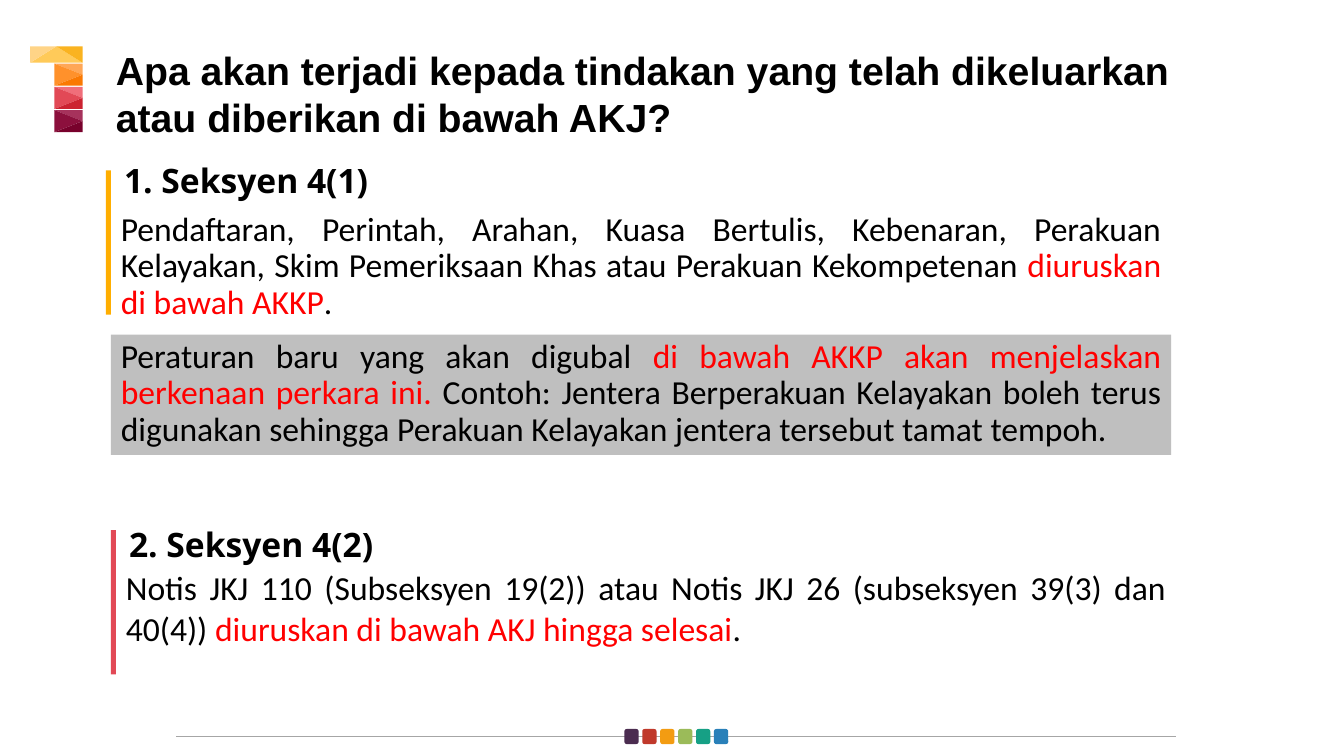
from lxml.etree import SubElement
from pptx import Presentation
from pptx.dml.color import RGBColor
from pptx.enum.shapes import MSO_CONNECTOR, MSO_SHAPE
from pptx.enum.text import MSO_ANCHOR, MSO_AUTO_SIZE, PP_ALIGN
from pptx.oxml.ns import qn
from pptx.util import Pt

BLACK, RED, GREY = "000000", "FF0000", "BFBFBF"
WIDE = 757.4


def rgb(value):
    return RGBColor.from_string(value)


def write(sp, runs, font="Calibri", size=24, bold=False, align=PP_ALIGN.LEFT,
          spacing=1.0, inset=(0, 0)):
    """Fill a shape with one paragraph made of (text, colour) runs."""
    tf = sp.text_frame
    tf.word_wrap = True
    tf.auto_size = MSO_AUTO_SIZE.NONE
    tf.vertical_anchor = MSO_ANCHOR.TOP
    tf.margin_left = tf.margin_right = Pt(inset[0])
    tf.margin_top = tf.margin_bottom = Pt(inset[1])
    p = tf.paragraphs[0]
    p.alignment = align
    p.line_spacing = spacing
    for text, color in runs:
        r = p.add_run()
        r.text = text
        r.font.name, r.font.size, r.font.bold = font, Pt(size), bold
        r.font.color.rgb = rgb(color)


def paint(sp, color):
    sp.shadow.inherit = False
    sp.fill.solid()
    sp.fill.fore_color.rgb = rgb(color)
    sp.line.fill.background()


def add_block(shapes, box, color, kind=MSO_SHAPE.RECTANGLE):
    sp = shapes.add_shape(kind, *map(Pt, box))
    paint(sp, color)
    return sp


def add_text(s, box, runs, **fmt):
    write(s.shapes.add_textbox(*map(Pt, box)), runs, **fmt)


def body_format(spacing):
    return dict(align=PP_ALIGN.JUSTIFY, spacing=spacing, inset=(7.2, 3.6))


def add_title(s, box, text):
    title = s.shapes.title
    title.left, title.top, title.width, title.height = map(Pt, box)
    write(title, [(text, BLACK)], font="Arial", size=28, bold=True)


def add_triangles(shapes, box, triangles):
    """Draw (colour, corners) triangles, corners being fractions of the box."""
    left, top, width, height = box
    for color, corners in triangles:
        points = [(Pt(left + fx * width), Pt(top + fy * height)) for fx, fy in corners]
        outline = shapes.build_freeform(*points[0])
        outline.add_line_segments(points[1:], close=True)
        paint(outline.convert_to_shape(), color)


def add_numeral(s, left, top):
    """Draw the faceted figure one: a flag above three stem blocks."""
    shapes = s.shapes.add_group_shape().shapes
    peak = (0.5, 0)
    add_triangles(shapes, (left, top, 37.4, 11.7), [
        ("FFCA59", [(0, 1), (1, 1), peak]),
        ("FFD487", [(0, 0), (0, 1), peak]),
        ("FAB320", [peak, (1, 1), (1, 0)])])
    middle = (1, 0.5)
    facets = [[(0, 0), (1, 0), middle], [(0, 0), middle, (0, 1)], [(0, 1), middle, (1, 1)]]
    stem = [("FFA757", "FF912B", "FA7902"),
            ("F06E7A", "E24956", "CC2331"),
            ("A6325C", "8C103D", "78012C")]
    for i, colors in enumerate(stem):
        add_triangles(shapes, (left + 17.3, top + 12.4 + i * 16.6, 20.1, 15.7),
                      zip(colors, facets))


def add_section(s, box, accent, heading, runs, heading_dy, body_dy, spacing):
    """Place an accent bar with a heading and a paragraph to its right."""
    left, top, width, height = box
    add_block(s.shapes, (left, top, 3.6, height), accent)
    add_text(s, (left + 13, top + heading_dy, 210, 28.8), [(heading, BLACK)],
             font="Open Sans", bold=True)
    add_text(s, (left + 3.6, top + body_dy, width, 86), runs, **body_format(spacing))


def add_note(s, box, runs):
    write(add_block(s.shapes, box, GREY), runs, **body_format(0.9))


def add_footer(s, left, y, width):
    """Draw the rule with a centred row of coloured squares."""
    shapes = s.shapes.add_group_shape().shapes
    rule = shapes.add_connector(MSO_CONNECTOR.STRAIGHT, Pt(left), Pt(y), Pt(left + width), Pt(y))
    rule.line.color.rgb = rgb("A6A6A6")
    rule.line.width = Pt(0.75)
    SubElement(rule._element.spPr, qn("a:effectLst"))
    colors = ["4B2C50", "C0392B", "F39C12", "9BBB59", "16A085", "2980B9"]
    side, pitch = 10.2, 12.8
    first = left + (width - side - pitch * (len(colors) - 1)) / 2
    for i, color in enumerate(colors):
        add_block(shapes, (first + i * pitch, y - 5.6, side, 10.8), color,
                  MSO_SHAPE.ROUNDED_RECTANGLE)


def main():
    prs = Presentation()
    prs.slide_width, prs.slide_height = Pt(960), Pt(540)
    s = prs.slides.add_slide(prs.slide_layouts[5])
    add_title(s, (82.8, 33.1, 811.4, 67.7),
              "Apa akan terjadi kepada tindakan yang telah dikeluarkan "
              "atau diberikan di bawah AKJ?")
    add_numeral(s, 21.6, 33.1)
    add_section(s, (75.6, 121.7, WIDE, 103), "FFAE00", "1. Seksyen 4(1)", [
        ("Pendaftaran, Perintah, Arahan, Kuasa Bertulis, Kebenaran, Perakuan Kelayakan, "
         "Skim Pemeriksaan Khas atau Perakuan Kekompetenan ", BLACK),
        ("diuruskan di bawah AKKP", RED), (".", BLACK)],
        heading_dy=-7.2, body_dy=26.6, spacing=0.9)
    add_note(s, (79.2, 239, WIDE, 86), [
        ("Peraturan baru yang akan digubal ", BLACK),
        ("di bawah AKKP akan menjelaskan berkenaan perkara ini. ", RED),
        ("Contoh: Jentera Berperakuan Kelayakan boleh terus digunakan sehingga "
         "Perakuan Kelayakan jentera tersebut tamat tempoh.", BLACK)])
    add_section(s, (79.2, 378.7, WIDE, 103), "E24956", "2. Seksyen 4(2)", [
        ("Notis JKJ 110 (Subseksyen 19(2)) atau Notis JKJ 26 "
         "(subseksyen 39(3) dan 40(4)) ", BLACK),
        ("diuruskan di bawah AKJ hingga selesai", RED), (".", BLACK)],
        heading_dy=-4.3, body_dy=23, spacing=1.0)
    add_footer(s, 126, 526.3, 714.2)
    prs.save("out.pptx")


if __name__ == "__main__":
    main()
